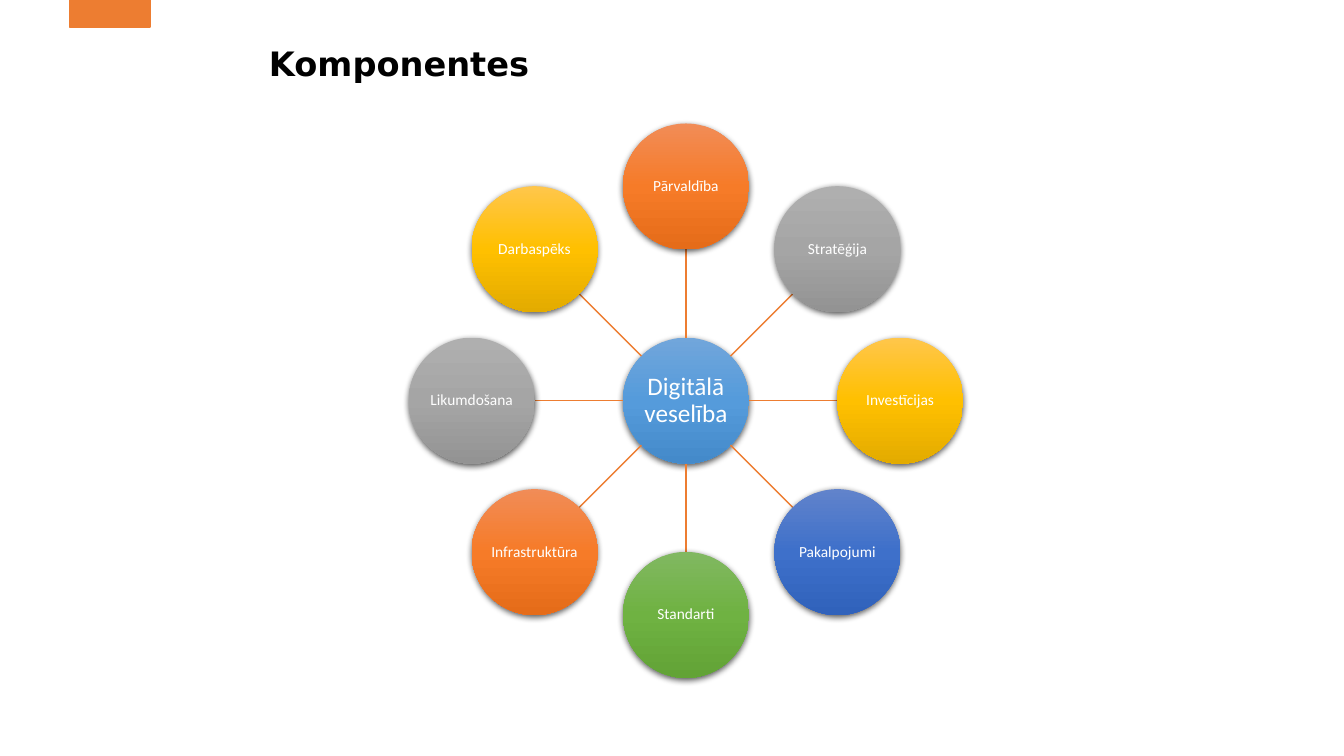
import copy
import dataclasses
import math

import pptx
import pptx.dml.color
import pptx.enum.shapes
import pptx.enum.text
import pptx.oxml
import pptx.oxml.ns
import pptx.util

SLIDE_WIDTH = pptx.util.Inches(13.333)
SLIDE_HEIGHT = pptx.util.Inches(7.5)

# Three gradient colours each, from top to bottom
BLUE = ("71A6DB", "559BDB", "448ACA")
ORANGE = ("F18C57", "F67B28", "E56C19")
GREY = ("AFAFAF", "A5A5A5", "939393")
GOLD = ("FFC64B", "FFC000", "E3AB00")
INDIGO = ("6183CB", "3E70CA", "3062BB")
GREEN = ("81B861", "6FB242", "62A336")
ACCENT = "ED7D31"

SOFT_SHADOW = (
    f'<a:outerShdw {pptx.oxml.ns.nsdecls("a")} blurRad="57150" dist="19050" '
    'dir="5400000" algn="ctr" rotWithShape="0">'
    '<a:srgbClr val="000000"><a:alpha val="63000"/></a:srgbClr></a:outerShdw>'
)


@dataclasses.dataclass(frozen=True)
class Component:
    label: str
    colours: tuple[str, str, str]
    size: int = 11


# Clockwise from the top
COMPONENTS = [
    Component("Pārvaldība", ORANGE),
    Component("Stratēģija", GREY),
    Component("Investīcijas", GOLD),
    Component("Pakalpojumi", INDIGO),
    Component("Standarti", GREEN),
    Component("Infrastruktūra", ORANGE),
    Component("Likumdošana", GREY),
    Component("Darbaspēks", GOLD),
]
HUB = Component("Digitālā veselība", BLUE, 18)


def across(percent: float) -> int:
    return round(SLIDE_WIDTH * percent / 100)


def down(percent: float) -> int:
    return round(SLIDE_HEIGHT * percent / 100)


HUB_X, HUB_Y = across(51.04), down(53)
DIAMETER = SLIDE_HEIGHT // 6
RING_RADIUS = 1.7 * DIAMETER


def colour(value: str) -> pptx.dml.color.RGBColor:
    return pptx.dml.color.RGBColor.from_string(value)


def apply(target: object, formats: dict[str, object]) -> None:
    for name, value in formats.items():
        setattr(target, name, value)


def write(frame, text: str, font: str, size: int, hex_colour: str, bold: bool,
          align, formats: dict[str, object]) -> None:
    apply(frame, formats)
    paragraph = frame.paragraphs[0]
    apply(paragraph, {"alignment": align, "line_spacing": 0.9})
    run = paragraph.add_run()
    run.text = text
    apply(run.font, {"name": font, "size": pptx.util.Pt(size), "bold": bold})
    run.font.color.rgb = colour(hex_colour)


def point_on_ring(radius: float, angle: float) -> tuple[int, int]:
    return (round(HUB_X + radius * math.sin(angle)),
            round(HUB_Y - radius * math.cos(angle)))


def add_spoke(shapes, angle: float) -> None:
    start = point_on_ring(DIAMETER / 2, angle)
    end = point_on_ring(RING_RADIUS - DIAMETER / 2, angle)
    spoke = shapes.add_connector(
        pptx.enum.shapes.MSO_CONNECTOR.STRAIGHT, *start, *end)
    spoke.line.color.rgb = colour(ACCENT)
    spoke.line.width = pptx.util.Pt(1)
    spoke._element.spPr.append(
        pptx.oxml.parse_xml(f'<a:effectLst {pptx.oxml.ns.nsdecls("a")}/>'))


def add_circle(shapes, component: Component, centre: tuple[int, int]) -> None:
    x, y = centre
    circle = shapes.add_shape(
        pptx.enum.shapes.MSO_SHAPE.OVAL,
        x - DIAMETER // 2, y - DIAMETER // 2, DIAMETER, DIAMETER)
    circle.line.fill.background()

    # Gradient with a middle stop
    circle.fill.gradient()
    circle.fill.gradient_angle = 270
    properties = circle._element.spPr
    stop_list = properties.find(".//" + pptx.oxml.ns.qn("a:gsLst"))
    stop_list.append(copy.deepcopy(stop_list[-1]))
    for index, stop in enumerate(circle.fill.gradient_stops):
        stop.position = index / 2
        stop.color.rgb = colour(component.colours[index])

    circle.shadow.inherit = False
    effects = properties.find(pptx.oxml.ns.qn("a:effectLst"))
    effects.append(pptx.oxml.parse_xml(SOFT_SHADOW))

    inset = pptx.util.Inches(0.01)
    write(circle.text_frame, component.label, "Calibri", component.size,
          "FFFFFF", False, pptx.enum.text.PP_ALIGN.CENTER, {
              "margin_left": inset, "margin_right": inset,
              "margin_top": inset, "margin_bottom": inset,
              "vertical_anchor": pptx.enum.text.MSO_ANCHOR.MIDDLE,
              "word_wrap": component is HUB,
          })


def main() -> None:
    presentation = pptx.Presentation()
    apply(presentation,
          {"slide_width": SLIDE_WIDTH, "slide_height": SLIDE_HEIGHT})
    shapes = presentation.slides.add_slide(presentation.slide_layouts[6]).shapes

    # Accent tab at the top edge
    tab = shapes.add_shape(pptx.enum.shapes.MSO_SHAPE.RECTANGLE,
                           across(5.18), 0, across(6), down(3.6))
    tab.shadow.inherit = False
    tab.fill.solid()
    tab.fill.fore_color.rgb = colour(ACCENT)
    tab.line.color.rgb = colour(ACCENT)
    tab.line.width = pptx.util.Pt(1)

    # Title
    title = shapes.add_textbox(across(19.28), down(5.6),
                               across(74.93), down(13.87))
    write(title.text_frame, "Komponentes", "DejaVu Sans", 24, "000000", True,
          pptx.enum.text.PP_ALIGN.LEFT, {"word_wrap": True})

    # Hub with the components around it
    add_circle(shapes, HUB, (HUB_X, HUB_Y))
    for index, component in enumerate(COMPONENTS):
        angle = index * math.tau / len(COMPONENTS)
        add_spoke(shapes, angle)
        add_circle(shapes, component, point_on_ring(RING_RADIUS, angle))

    presentation.save("out.pptx")


if __name__ == "__main__":
    main()
